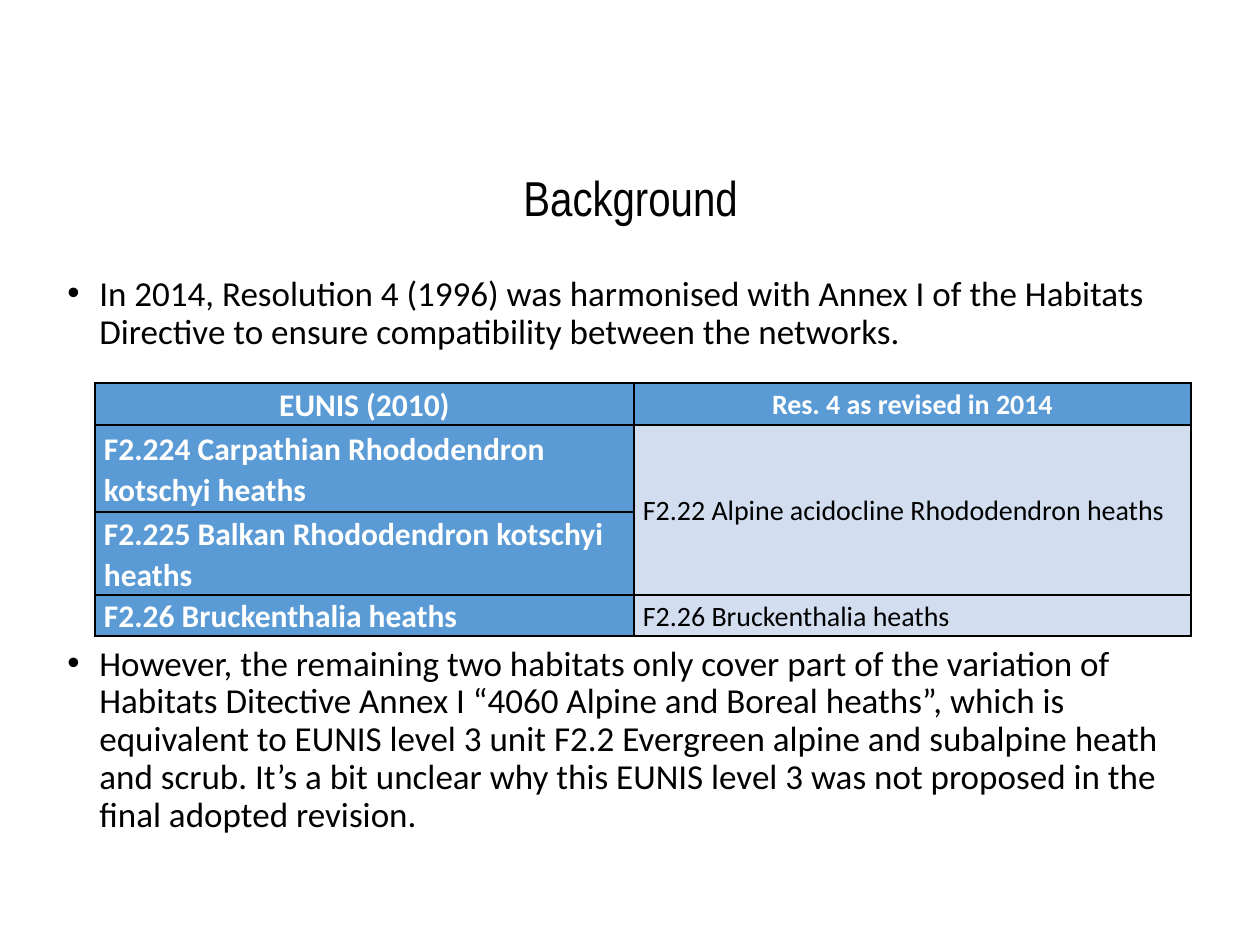
from dataclasses import dataclass

from lxml import etree
from pptx import Presentation
from pptx.dml.color import RGBColor
from pptx.enum.text import MSO_ANCHOR, PP_ALIGN
from pptx.oxml.ns import qn
from pptx.util import Pt

EMU_PER_PX = 914400 / 126
LEFT, CENTER = PP_ALIGN.LEFT, PP_ALIGN.CENTER
TOP, MIDDLE = MSO_ANCHOR.TOP, MSO_ANCHOR.MIDDLE


@dataclass(frozen=True)
class Theme:
    ink: str = "000000"
    white: str = "FFFFFF"
    header_fill: str = "5B9BD5"
    value_fill: str = "D2DEEF"
    heading_font: str = "Arial Narrow"
    body_font: str = "Calibri"
    heading_size: int = 28
    body_size: int = 20
    key_size: int = 18
    value_size: int = 16
    border_width: int = 1


THEME = Theme()

TITLE = "Background"
HARMONISATION = (
    "In 2014, Resolution 4 (1996) was harmonised with Annex I of the Habitats "
    "Directive to ensure compatibility between the networks."
)
LIMITATION = (
    "However, the remaining two habitats only cover part of the variation of "
    "Habitats Ditective Annex I “4060 Alpine and Boreal heaths”, which is "
    "equivalent to EUNIS level 3 unit F2.2 Evergreen alpine and subalpine heath "
    "and scrub. It’s a bit unclear why this EUNIS level 3 was not proposed in "
    "the final adopted revision."
)
TABLE_GAP = 168  # points between the bullets, where the table sits

HABITATS = [
    ("EUNIS (2010)", "Res. 4 as revised in 2014"),
    ("F2.224 Carpathian Rhododendron kotschyi heaths",
     "F2.22 Alpine acidocline Rhododendron heaths"),
    ("F2.225 Balkan Rhododendron kotschyi heaths", None),
    ("F2.26 Bruckenthalia heaths", "F2.26 Bruckenthalia heaths"),
]
COLUMN_WIDTHS = (539, 557)
ROW_HEIGHTS = (42, 87, 83, 41)


def px(length):
    return round(length * EMU_PER_PX)


def add_bullet(paragraph, indent):
    properties = paragraph._p.get_or_add_pPr()
    properties.set("marL", str(px(indent)))
    properties.set("indent", str(-px(indent)))
    font = etree.SubElement(properties, qn("a:buFont"))
    font.set("typeface", "Arial")
    etree.SubElement(properties, qn("a:buChar")).set("char", "•")


def write_text(paragraph, text, *, size, font=THEME.body_font, color=THEME.ink,
               bold=False, align=LEFT, line_spacing=0.9, space_before=0,
               bullet_indent=0):
    paragraph.alignment = align
    paragraph.line_spacing = line_spacing
    paragraph.space_before = Pt(space_before)
    if bullet_indent:
        add_bullet(paragraph, bullet_indent)
    run = paragraph.add_run()
    run.text = text
    run.font.name = font
    run.font.size = Pt(size)
    run.font.bold = bold
    run.font.color.rgb = RGBColor.from_string(color)


def add_text_frame(slide, left, top, width, height, anchor):
    box = slide.shapes.add_textbox(px(left), px(top), px(width), px(height))
    frame = box.text_frame
    frame.word_wrap = True
    frame.vertical_anchor = anchor
    return frame


def add_title(slide):
    frame = add_text_frame(slide, 95, 155, 1071, 92, MIDDLE)
    write_text(frame.paragraphs[0], TITLE, size=THEME.heading_size,
               font=THEME.heading_font, align=CENTER)


def add_bullets(slide):
    frame = add_text_frame(slide, 55, 270, 1149, 606, TOP)
    write_text(frame.paragraphs[0], HARMONISATION, size=THEME.body_size,
               bullet_indent=32)
    write_text(frame.add_paragraph(), LIMITATION, size=THEME.body_size,
               bullet_indent=32, space_before=TABLE_GAP)


def outline_cell(cell):
    properties = cell._tc.get_or_add_tcPr()
    for side in ("a:lnL", "a:lnR", "a:lnT", "a:lnB"):
        line = etree.SubElement(properties, qn(side))
        line.set("w", str(Pt(THEME.border_width)))
        fill = etree.SubElement(line, qn("a:solidFill"))
        etree.SubElement(fill, qn("a:srgbClr")).set("val", THEME.ink)


def style_cell(cell, is_header):
    outline_cell(cell)
    cell.fill.solid()
    cell.fill.fore_color.rgb = RGBColor.from_string(
        THEME.header_fill if is_header else THEME.value_fill)
    cell.vertical_anchor = MIDDLE
    cell.margin_left = cell.margin_right = px(9)
    cell.margin_top = cell.margin_bottom = 0


def add_habitat_table(slide):
    table = slide.shapes.add_table(
        len(HABITATS), len(COLUMN_WIDTHS), px(95), px(383),
        px(sum(COLUMN_WIDTHS)), px(sum(ROW_HEIGHTS))).table
    for column, width in zip(table.columns, COLUMN_WIDTHS):
        column.width = px(width)
    for row, height in zip(table.rows, ROW_HEIGHTS):
        row.height = px(height)

    for row_index, habitats in enumerate(HABITATS):
        for column_index, text in enumerate(habitats):
            cell = table.cell(row_index, column_index)
            is_key = column_index == 0
            is_header = is_key or row_index == 0
            style_cell(cell, is_header)
            if text:
                write_text(cell.text_frame.paragraphs[0], text,
                           size=THEME.key_size if is_key else THEME.value_size,
                           color=THEME.white if is_header else THEME.ink,
                           bold=is_header, line_spacing=1.07,
                           align=CENTER if row_index == 0 else LEFT)
    table.cell(1, 1).merge(table.cell(2, 1))


def main():
    presentation = Presentation()
    presentation.slide_width, presentation.slide_height = px(1260), px(945)
    slide = presentation.slides.add_slide(presentation.slide_layouts[6])
    add_title(slide)
    add_bullets(slide)
    add_habitat_table(slide)
    presentation.save("out.pptx")


if __name__ == "__main__":
    main()
